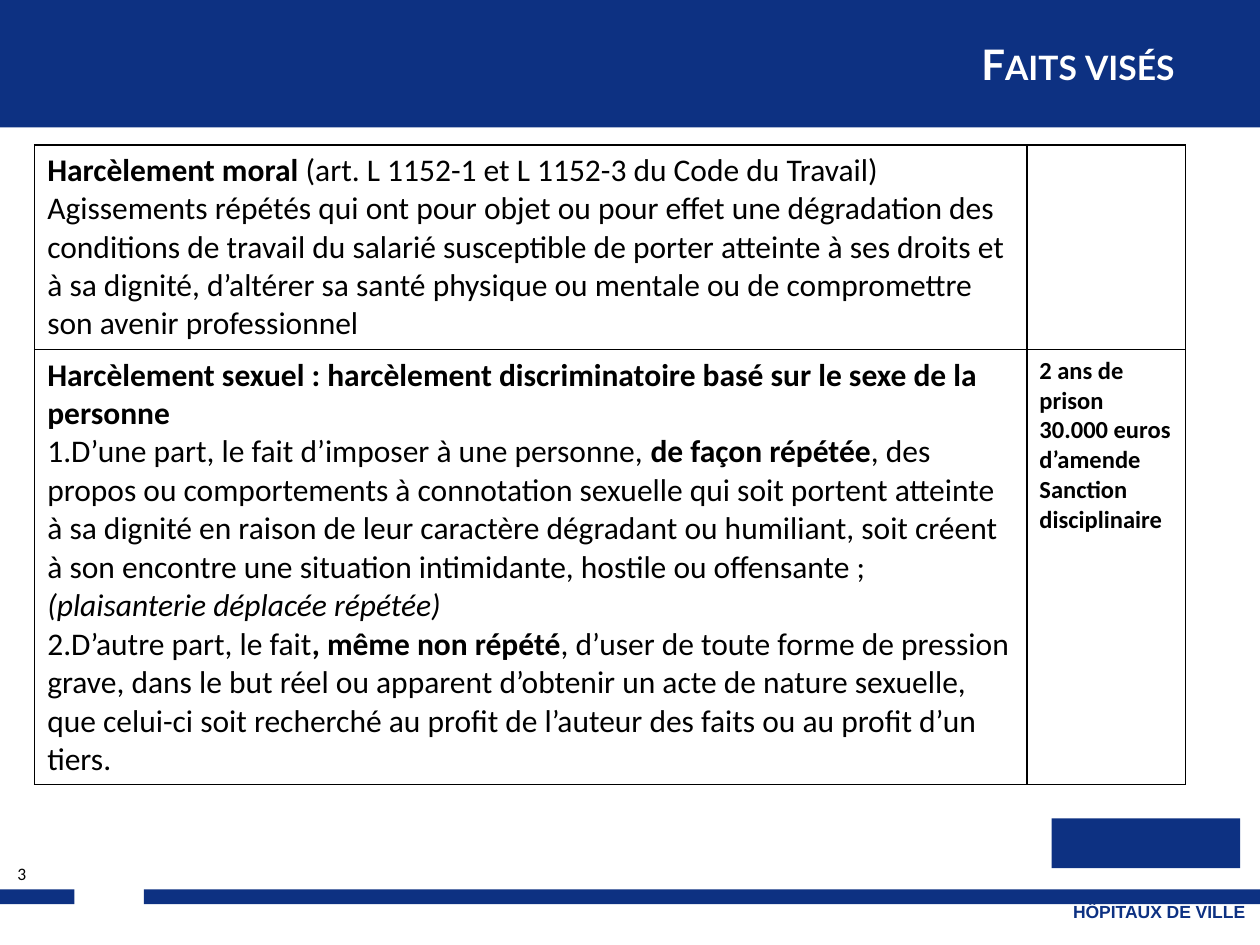
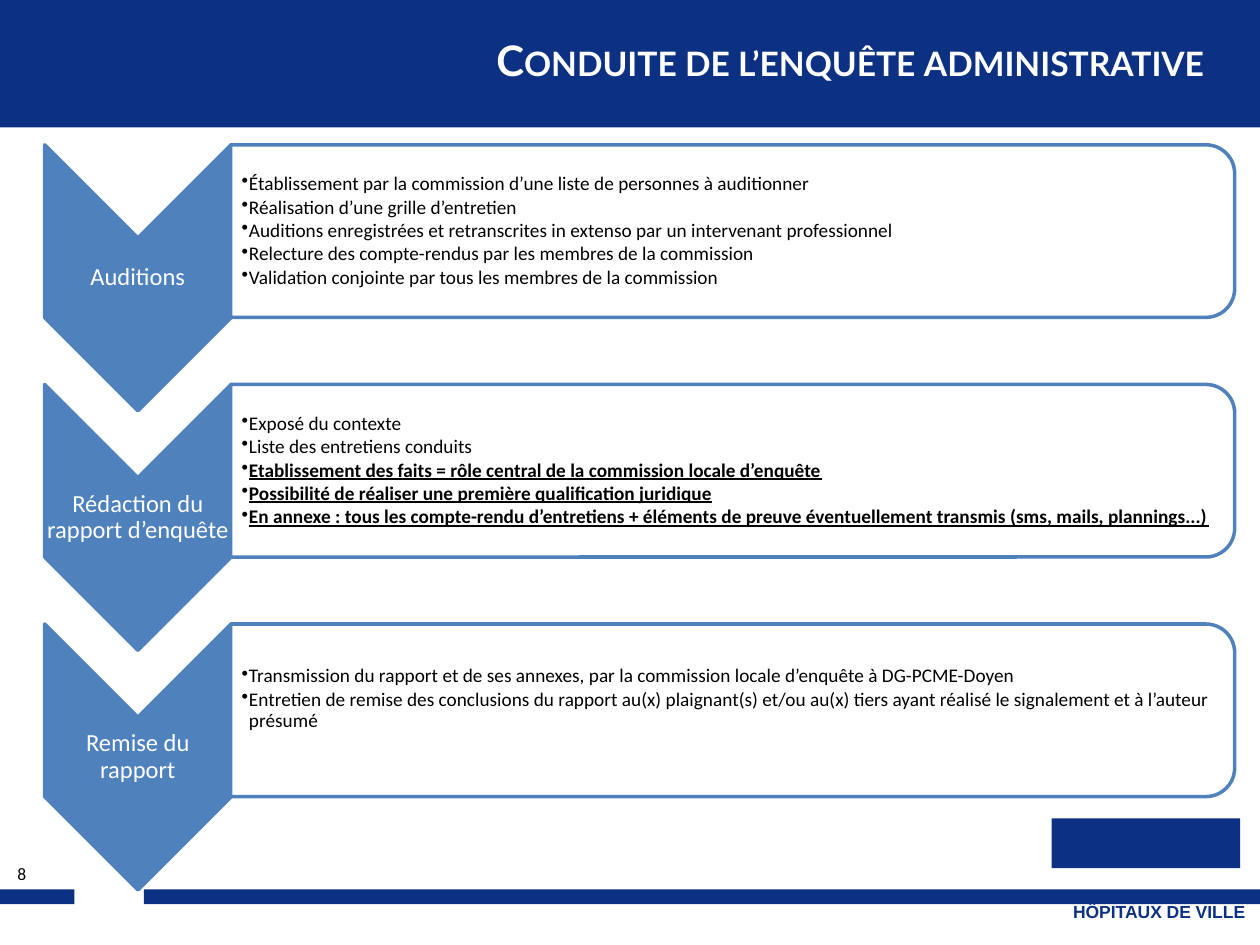
from dataclasses import dataclass

from lxml.etree import SubElement
from pptx import Presentation
from pptx.dml.color import RGBColor
from pptx.enum.shapes import MSO_SHAPE as Shape
from pptx.enum.text import MSO_ANCHOR as Anchor, PP_ALIGN as Align
from pptx.oxml import parse_xml
from pptx.oxml.ns import nsdecls, qn
from pptx.util import Cm, Pt


@dataclass(frozen=True)
class Theme:
    navy: RGBColor = RGBColor(0x0D, 0x31, 0x82)
    steel: RGBColor = RGBColor(0x4F, 0x81, 0xBD)
    white: RGBColor = RGBColor(0xFF, 0xFF, 0xFF)
    black: RGBColor = RGBColor(0, 0, 0)
    title_font: str = "Lato"
    body_font: str = "Calibri"
    footer_font: str = "Arial"
    title_size: int = 24
    table_size: int = 18
    label_size: int = 14
    bullet_size: int = 11
    small_size: int = 10


theme = Theme()


def add_frame(page, left, top, width, height, insets=(0.25, 0.13, 0.25, 0.13), anchor=Anchor.TOP):
    """Add a wrapping text box, measured in cm, and return its text frame."""
    box = page.shapes.add_textbox(Cm(left), Cm(top), Cm(width), Cm(height))
    frame = box.text_frame
    frame.word_wrap = True
    frame.vertical_anchor = anchor
    frame.margin_left, frame.margin_top, frame.margin_right, frame.margin_bottom = map(Cm, insets)
    return frame


def write(frame, paragraphs, size, colour=theme.black, font=theme.body_font,
          align=Align.LEFT, line_spacing=None, bullet=None):
    """Write paragraphs, each a list of (text, marks); marks are letters out of b, i and u."""
    for index, spans in enumerate(paragraphs):
        para = frame.add_paragraph() if index else frame.paragraphs[0]
        para.alignment = align
        if line_spacing:
            para.line_spacing = line_spacing
        if bullet:
            para.space_after = Pt(1.5)
            properties = para._p.get_or_add_pPr()
            properties.set("marL", str(Cm(0.15)))
            properties.set("indent", str(-Cm(0.15)))
            SubElement(properties, qn("a:buChar"), char=bullet)
        para.font.size = Pt(size)
        para.font.name = font
        para.font.color.rgb = colour
        for text, marks in spans:
            span = para.add_run()
            span.text = text
            target = para.font if len(spans) == 1 else span.font
            target.bold = "b" in marks
            target.italic = "i" in marks
            target.underline = "u" in marks


deck = Presentation()
deck.slide_width, deck.slide_height = Cm(25.4), Cm(19.05)

# Title band, footer and page number of every page
bands = [
    (0, 0, 25.4, 2.57),
    (2.9, 17.93, 22.5, 0.3),
    (0, 17.93, 1.5, 0.3),
    (21.2, 16.5, 3.8, 1),
]
headings = [
    # title, page number, top and right edge of the title box
    ("Faits visés", "3", 0.08, 23.93),
    ("Conduite de l’enquête administrative", "8", 0, 24.53),
]
pages = []
for title, number, title_top, title_right in headings:
    page = deck.slides.add_slide(deck.slide_layouts[6])
    pages.append(page)
    for left, top, width, height in bands:
        band = page.shapes.add_shape(Shape.RECTANGLE, Cm(left), Cm(top), Cm(width), Cm(height))
        band.shadow.inherit = False
        band.fill.solid()
        band.fill.fore_color.rgb = theme.navy
        band.line.fill.background()

    write(add_frame(page, 20.1, 18.16, 5, 0.43, (0, 0, 0, 0)), [[("HÔPITAUX DE VILLE", "b")]],
          theme.small_size, theme.navy, theme.footer_font, Align.RIGHT)

    write(add_frame(page, 0.1, 17.26, 1.2, 0.69), [[(number, "")]], theme.small_size)

    heading = add_frame(page, 1.3, title_top, title_right - 1.3, 2.41, anchor=Anchor.MIDDLE)
    write(heading, [[(title, "b")]], theme.title_size, theme.white, theme.title_font, Align.RIGHT)
    heading.paragraphs[0].runs[0]._r.get_or_add_rPr().set("cap", "small")

facts_page, inquiry_page = pages

# Facts and penalties
moral = [
    [("Harcèlement moral ", "b"), ("(art. L 1152-1 et L 1152-3 du Code du Travail)", "")],
    [("Agissements répétés qui ont pour objet ou pour effet une dégradation des conditions de "
      "travail du salarié susceptible de porter atteinte à ses droits et à sa dignité, d’altérer "
      "sa santé physique ou mentale ou de compromettre son avenir professionnel", "")],
]
sexual = [
    [("Harcèlement sexuel : harcèlement discriminatoire basé sur le sexe de la personne", "b")],
    [("1.D’une part, le fait d’imposer à une personne, ", ""),
     ("de façon répétée", "b"),
     (", des propos ou comportements à connotation sexuelle qui soit portent atteinte à sa "
      "dignité en raison de leur caractère dégradant ou humiliant, soit créent à son encontre "
      "une situation intimidante, hostile ou offensante ; ", ""),
     ("(plaisanterie déplacée répétée)", "i")],
    [("2.D’autre part, le fait", ""),
     (", même non répété", "b"),
     (", d’user de toute forme de pression grave, dans le but réel ou apparent d’obtenir un acte "
      "de nature sexuelle, que celui-ci soit recherché au profit de l’auteur des faits ou au "
      "profit d’un tiers.", "")],
]
penalties = [
    [("2 ans de prison", "b")],
    [("30.000 euros d’amende", "b")],
    [("Sanction disciplinaire", "b")],
]
facts = [(moral, []), (sexual, penalties)]
column_widths, row_heights = (20, 3.2), (4.13, 8.76)
column_sizes = (theme.table_size, theme.label_size)

table = facts_page.shapes.add_table(
    2, 2, Cm(0.7), Cm(2.92), Cm(sum(column_widths)), Cm(sum(row_heights))).table
table.first_row = table.horz_banding = False
for column, width in zip(table.columns, column_widths):
    column.width = Cm(width)
for row, height, contents in zip(table.rows, row_heights, facts):
    row.height = Cm(height)
    for cell, paragraphs, size in zip(row.cells, contents, column_sizes):
        write(cell.text_frame, paragraphs, size)
        cell.fill.background()
        for position, side in enumerate(("lnL", "lnR", "lnT", "lnB")):
            border = parse_xml(
                f'<a:{side} {nsdecls("a")} w="{Pt(1)}"><a:solidFill>'
                f'<a:srgbClr val="{theme.black}"/></a:solidFill></a:{side}>')
            cell._tc.get_or_add_tcPr().insert(position, border)

# Steps of the inquiry: label, bullets, bottom inset of the bullet box
steps = [
    ("Auditions", [
        ("Établissement par la commission d’une liste de personnes à auditionner", ""),
        ("Réalisation d’une grille d’entretien", ""),
        ("Auditions enregistrées et retranscrites in extenso par un intervenant professionnel", ""),
        ("Relecture des compte-rendus par les membres de la commission", ""),
        ("Validation conjointe par tous les membres de la commission", ""),
    ], 0.03),
    ("Rédaction du rapport d’enquête", [
        ("Exposé du contexte", ""),
        ("Liste des entretiens conduits", ""),
        ("Etablissement des faits = rôle central de la commission locale d’enquête", "bu"),
        ("Possibilité de réaliser une première qualification juridique", "bu"),
        ("En annexe : tous les compte-rendu d’entretiens + éléments de preuve éventuellement "
         "transmis (sms, mails, plannings...)", "bu"),
    ], 0.03),
    ("Remise du rapport", [
        ("Transmission du rapport et de ses annexes, par la commission locale d’enquête à "
         "DG-PCME-Doyen", ""),
        ("Entretien de remise des conclusions du rapport au(x) plaignant(s) et/ou au(x) tiers "
         "ayant réalisé le signalement et à l’auteur présumé", ""),
    ], 0.5),
]
step_pitch = 4.83
for index, (label, bullets, bottom_inset) in enumerate(steps):
    chevron_middle = 5.6 + index * step_pitch
    panel_middle = 4.66 + index * step_pitch
    # Both outlines are turned a quarter: kind, centre x, centre y, length, breadth, fill
    outlines = [
        (Shape.CHEVRON, 2.78, chevron_middle, 5.36, 3.76, theme.steel),
        (Shape.ROUND_2_SAME_RECTANGLE, 14.77, panel_middle, 3.48, 20.24, theme.white),
    ]
    for kind, centre, middle, width, height, fill in outlines:
        outline = inquiry_page.shapes.add_shape(
            kind, Cm(centre - width / 2), Cm(middle - height / 2), Cm(width), Cm(height))
        outline.rotation = 90
        outline.shadow.inherit = False
        outline.fill.solid()
        outline.fill.fore_color.rgb = fill
        outline.line.color.rgb = theme.steel
        outline.line.width = Pt(2)

    label_frame = add_frame(inquiry_page, 0.9, chevron_middle - 0.8, 3.76, 1.6,
                            (0.03, 0.03, 0.03, 0.03), Anchor.MIDDLE)
    write(label_frame, [[(label, "")]], theme.label_size, theme.white,
          align=Align.CENTER, line_spacing=0.9)

    panel_frame = add_frame(inquiry_page, 4.64, panel_middle - 1.57, 20.09, 3.14,
                            (0.23, 0.03, 0.03, bottom_inset), Anchor.MIDDLE)
    write(panel_frame, [[item] for item in bullets], theme.bullet_size,
          line_spacing=0.9, bullet="•")

deck.save("out.pptx")
